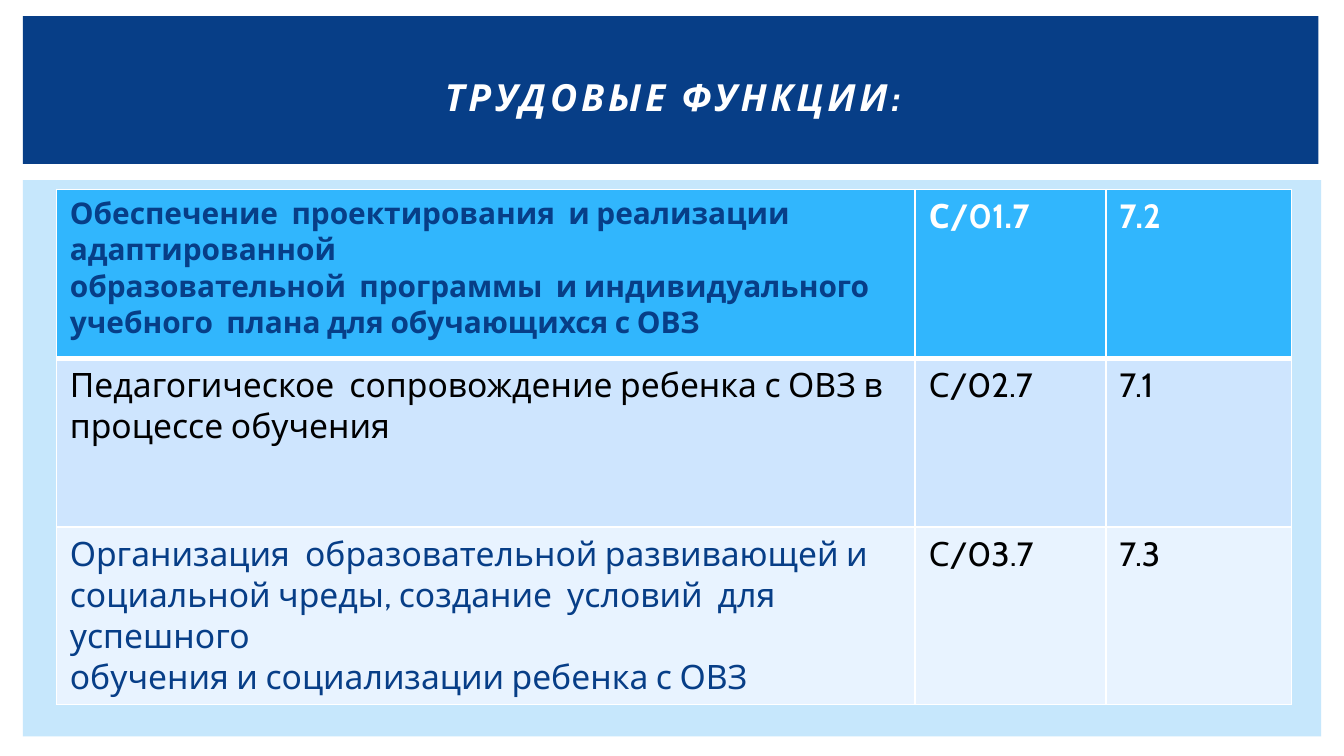
from typing import NamedTuple

from lxml import etree
from pptx import Presentation
from pptx.dml.color import RGBColor
from pptx.enum import shapes, text
from pptx.oxml import ns
from pptx.util import Inches, Pt

FONT = "Cabin"
WHITE, BLACK, NAVY, PALE = "FFFFFF", "000000", "073E87", "C6E7FC"


class Box(NamedTuple):
    left: float
    top: float
    width: float
    height: float

    def lengths(self) -> list:
        return [Inches(v) for v in self]


class Row(NamedTuple):
    function: str
    code: str
    level: str
    fill: str
    function_color: str
    code_color: str
    function_size: int = 18
    bold: bool = False
    bottom_line: int = 1


PANELS = [(Box(0.17, 1.34, 9.66, 4.14), PALE), (Box(0.17, 0.12, 9.64, 1.1), NAVY)]
TITLE_BOX = Box(0.42, 0.29, 9.17, 0.86)
TABLE_BOX = Box(0.42, 1.41, 9.19, 3.77)
COLUMN_WIDTHS = [6.39, 1.42, 1.38]
ROWS = [
    Row("Обеспечение  проектирования  и реализации адаптированной\n"
        "образовательной  программы  и индивидуального  учебного  плана "
        "для обучающихся с ОВЗ",
        "С/01.7", "7.2", "31B6FD", NAVY, WHITE, 16, True, 3),
    Row("Педагогическое  сопровождение ребенка с ОВЗ в процессе обучения",
        "С/02.7", "7.1", "CEE5FE", BLACK, BLACK),
    Row("Организация  образовательной развивающей и социальной чреды, "
        "создание  условий  для  успешного\n"
        "обучения и социализации ребенка с ОВЗ",
        "С/03.7", "7.3", "E8F3FF", NAVY, BLACK),
]


def rgb(color: str) -> RGBColor:
    return RGBColor.from_string(color)


def format_runs(tf, size: int, color: str, bold: bool, italic: bool = False) -> None:
    for p in tf.paragraphs:
        for r in p.runs:
            r.font.name, r.font.size = FONT, Pt(size)
            r.font.bold, r.font.italic = bold, italic
            r.font.color.rgb = rgb(color)


def add_panel(s, box: Box, color: str) -> None:
    sp = s.shapes.add_shape(shapes.MSO_SHAPE.RECTANGLE, *box.lengths())
    sp.shadow.inherit = False
    sp.fill.solid()
    sp.fill.fore_color.rgb = rgb(color)
    sp.line.fill.background()


def add_border(cell, side: str, width: int) -> None:
    tc_pr = cell._tc.get_or_add_tcPr()
    ln = etree.SubElement(tc_pr, ns.qn(f"a:ln{side}"), w=str(Pt(width)))
    fill = etree.SubElement(ln, ns.qn("a:solidFill"))
    etree.SubElement(fill, ns.qn("a:srgbClr"), val=WHITE)


def fill_row(table, index: int, row: Row) -> None:
    top_line = ROWS[index - 1].bottom_line if index else 1
    widths = {"L": 1, "R": 1, "T": top_line, "B": row.bottom_line}
    for col, value in enumerate((row.function, row.code, row.level)):
        cell = table.cell(index, col)
        for side, width in widths.items():
            add_border(cell, side, width)
        cell.fill.solid()
        cell.fill.fore_color.rgb = rgb(row.fill)
        cell.text_frame.text = value
        size, color = ((row.function_size, row.function_color) if col == 0
                       else (18, row.code_color))
        format_runs(cell.text_frame, size, color, row.bold)


def add_functions_table(s) -> None:
    table = s.shapes.add_table(len(ROWS), len(COLUMN_WIDTHS), *TABLE_BOX.lengths()).table
    for column, width in zip(table.columns, COLUMN_WIDTHS):
        column.width = Inches(width)
    for index, row in enumerate(ROWS):
        table.rows[index].height = Inches(TABLE_BOX.height / len(ROWS))
        fill_row(table, index, row)


def place_title(s) -> None:
    title = s.shapes.title
    title.left, title.top, title.width, title.height = TITLE_BOX.lengths()
    tf = title.text_frame
    tf.text = "ТРУДОВЫЕ ФУНКЦИИ:"
    tf.word_wrap = True
    tf.vertical_anchor = text.MSO_ANCHOR.MIDDLE
    p = tf.paragraphs[0]
    p.alignment = text.PP_ALIGN.CENTER
    format_runs(tf, 20, WHITE, True, True)
    # Letter spacing of 2 points
    p.runs[0]._r.get_or_add_rPr().set("spc", "200")
    # Bring the title in front of the panels
    s.shapes.element.append(title.element)


def main() -> None:
    prs = Presentation()
    # Widescreen, 16:9
    prs.slide_width, prs.slide_height = Inches(10), Inches(10 * 9 / 16)
    s = prs.slides.add_slide(prs.slide_layouts[5])

    # Background panels
    for box, color in PANELS:
        add_panel(s, box, color)

    # Content
    add_functions_table(s)
    place_title(s)
    prs.save("out.pptx")


if __name__ == "__main__":
    main()
